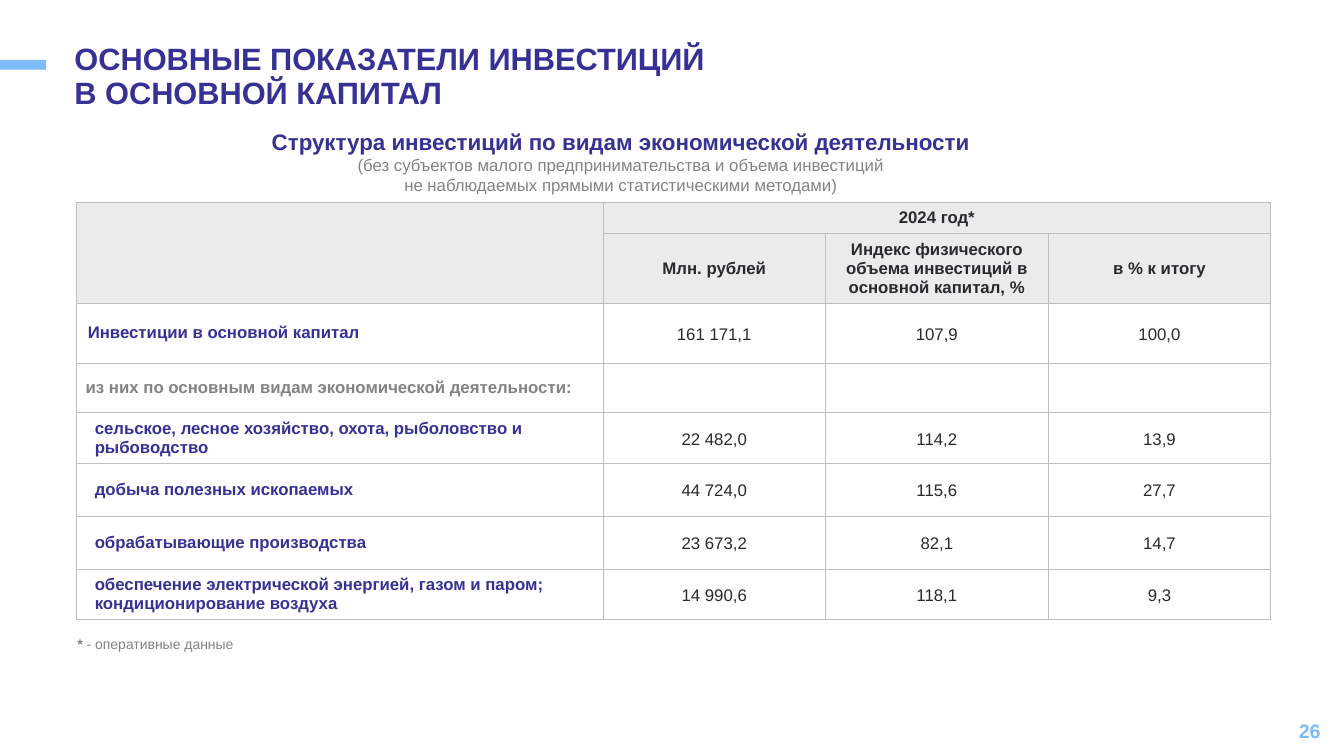
import dataclasses
import typing
import pptx
import pptx.dml.color
import pptx.enum.shapes
import pptx.enum.text
import pptx.oxml
import pptx.oxml.ns
import pptx.util

Pt = pptx.util.Pt
Align = pptx.enum.text.PP_ALIGN
Anchor = pptx.enum.text.MSO_ANCHOR


@dataclasses.dataclass(frozen=True)
class Theme:
    font: str = "Arial"
    navy: str = "363194"
    sky: str = "7DBBFC"
    gray: str = "838383"
    dark: str = "282A2E"
    head: str = "EBEBEB"
    edge: str = "BFBFBF"
    title: float = 22
    sub: float = 16
    body: float = 12
    note: float = 10
    page: float = 14


THEME = Theme()


@dataclasses.dataclass(frozen=True)
class Run:
    text: str
    size: float
    color: str
    bold: bool = True


@dataclasses.dataclass(frozen=True)
class Box:
    left: float
    top: float
    width: float
    height: float
    lines: list[list[Run]]
    align: typing.Any = Align.LEFT
    anchor: typing.Any = Anchor.TOP
    space: typing.Any = None


@dataclasses.dataclass(frozen=True)
class Row:
    label: str
    values: tuple[str, ...]
    height: float
    inset: float = 13
    color: str = THEME.navy


BOXES = [
    Box(734.4, 507.6, 216, 28.8, [[Run("26", THEME.page, THEME.sky)]],
        Align.RIGHT, Anchor.MIDDLE),
    Box(48.2, 449.3, 463, 19.5,
        [[Run("* ", THEME.note, THEME.gray),
          Run("- оперативные данные", THEME.note, THEME.gray, False)]],
        space=Pt(13)),
    Box(46.1, 28.1, 483, 55.4,
        [[Run("ОСНОВНЫЕ ПОКАЗАТЕЛИ ИНВЕСТИЦИЙ В ОСНОВНОЙ КАПИТАЛ",
              THEME.title, THEME.navy)]],
        space=0.9),
    Box(157.7, 87.8, 571.7, 55.4,
        [[Run("Структура инвестиций по видам экономической деятельности",
              THEME.sub, THEME.navy)],
         [Run("(без субъектов малого предпринимательства и объема инвестиций",
              THEME.body, THEME.gray, False)],
         [Run("не наблюдаемых прямыми статистическими методами)",
              THEME.body, THEME.gray, False)]],
        Align.CENTER),
]

YEAR = "2024 год*"
HEADS = ("Млн. рублей",
         "Индекс физического объема инвестиций в основной капитал, %",
         "в % к итогу")
TOPS = (22, 50)
WIDTHS = (376, 159, 159, 159)
ROWS = [
    Row("Инвестиции в основной капитал", ("161 171,1", "107,9", "100,0"), 42.5, 8),
    Row("из них по основным видам экономической деятельности:", (), 35.5, 6.5,
        THEME.gray),
    Row("сельское, лесное хозяйство, охота, рыболовство и рыбоводство",
        ("22 482,0", "114,2", "13,9"), 36),
    Row("добыча полезных ископаемых", ("44 724,0", "115,6", "27,7"), 38),
    Row("обрабатывающие производства", ("23 673,2", "82,1", "14,7"), 38),
    Row("обеспечение электрической энергией, газом и паром; кондиционирование воздуха",
        ("14 990,6", "118,1", "9,3"), 36),
]


def rgb(color: str) -> typing.Any:
    return pptx.dml.color.RGBColor.from_string(color)


def write(para: typing.Any, runs: list[Run], align: typing.Any,
          space: typing.Any = None) -> None:
    para.alignment = align
    if space is not None:
        para.line_spacing = space
    for item in runs:
        run = para.add_run()
        run.text = item.text
        run.font.name = THEME.font
        run.font.size = Pt(item.size)
        run.font.bold = item.bold
        run.font.color.rgb = rgb(item.color)


def draw_box(slide: typing.Any, box: Box) -> None:
    shape = slide.shapes.add_textbox(Pt(box.left), Pt(box.top),
                                     Pt(box.width), Pt(box.height))
    frame = shape.text_frame
    frame.word_wrap = True
    frame.vertical_anchor = box.anchor
    for i, runs in enumerate(box.lines):
        para = frame.add_paragraph() if i else frame.paragraphs[0]
        write(para, runs, box.align, box.space)


def draw_bar(slide: typing.Any) -> None:
    kind = pptx.enum.shapes.MSO_SHAPE.RECTANGLE
    bar = slide.shapes.add_shape(kind, 0, Pt(42.8), Pt(33), Pt(7))
    bar.shadow.inherit = False
    bar.fill.solid()
    bar.fill.fore_color.rgb = rgb(THEME.sky)
    bar.line.fill.background()


def frame_cell(cell: typing.Any) -> None:
    props = cell._tc.get_or_add_tcPr()
    space = pptx.oxml.ns.nsdecls("a")
    for i, side in enumerate("LRTB"):
        edge = pptx.oxml.parse_xml(
            f'<a:ln{side} {space} w="{Pt(0.5)}"><a:solidFill>'
            f'<a:srgbClr val="{THEME.edge}"/></a:solidFill></a:ln{side}>')
        props.insert(i, edge)


def fill_cell(cell: typing.Any, text: str, color: str, bold: bool,
              inset: float, align: typing.Any = Align.CENTER,
              space: typing.Any = None) -> None:
    cell.vertical_anchor = Anchor.MIDDLE
    cell.margin_left = Pt(inset)
    cell.margin_right = Pt(min(inset, 5) if align == Align.CENTER else 1)
    para = cell.text_frame.paragraphs[0]
    write(para, [Run(text, THEME.body, color, bold)], align, space)
    if space is not None:
        para.space_after = Pt(1)


def draw_table(slide: typing.Any) -> None:
    sizes = [*TOPS, *(row.height for row in ROWS)]
    table = slide.shapes.add_table(
        len(sizes), len(WIDTHS), Pt(54.7), Pt(144.7),
        Pt(sum(WIDTHS)), Pt(sum(sizes))).table
    table.first_row = False
    table.horz_banding = False
    for column, width in zip(table.columns, WIDTHS):
        column.width = Pt(width)
    for r, size in enumerate(sizes):
        table.rows[r].height = Pt(size)
        for cell in table.rows[r].cells:
            if r < len(TOPS):
                cell.fill.solid()
                cell.fill.fore_color.rgb = rgb(THEME.head)
            else:
                cell.fill.background()
            frame_cell(cell)
    table.cell(0, 0).merge(table.cell(1, 0))
    table.cell(0, 1).merge(table.cell(0, 3))
    fill_cell(table.cell(0, 1), YEAR, THEME.dark, True, 5)
    for c, text in enumerate(HEADS, 1):
        fill_cell(table.cell(1, c), text, THEME.dark, True, 1)
    for r, row in enumerate(ROWS, len(TOPS)):
        fill_cell(table.cell(r, 0), row.label, row.color, True, row.inset, Align.LEFT)
        for c, text in enumerate(row.values, 1):
            fill_cell(table.cell(r, c), text, THEME.dark, False, 5, space=1.15)


def main() -> None:
    deck = pptx.Presentation()
    deck.slide_width, deck.slide_height = Pt(960), Pt(540)
    slide = deck.slides.add_slide(deck.slide_layouts[6])
    draw_bar(slide)
    draw_table(slide)
    for box in BOXES:
        draw_box(slide, box)
    deck.save("out.pptx")


if __name__ == "__main__":
    main()
